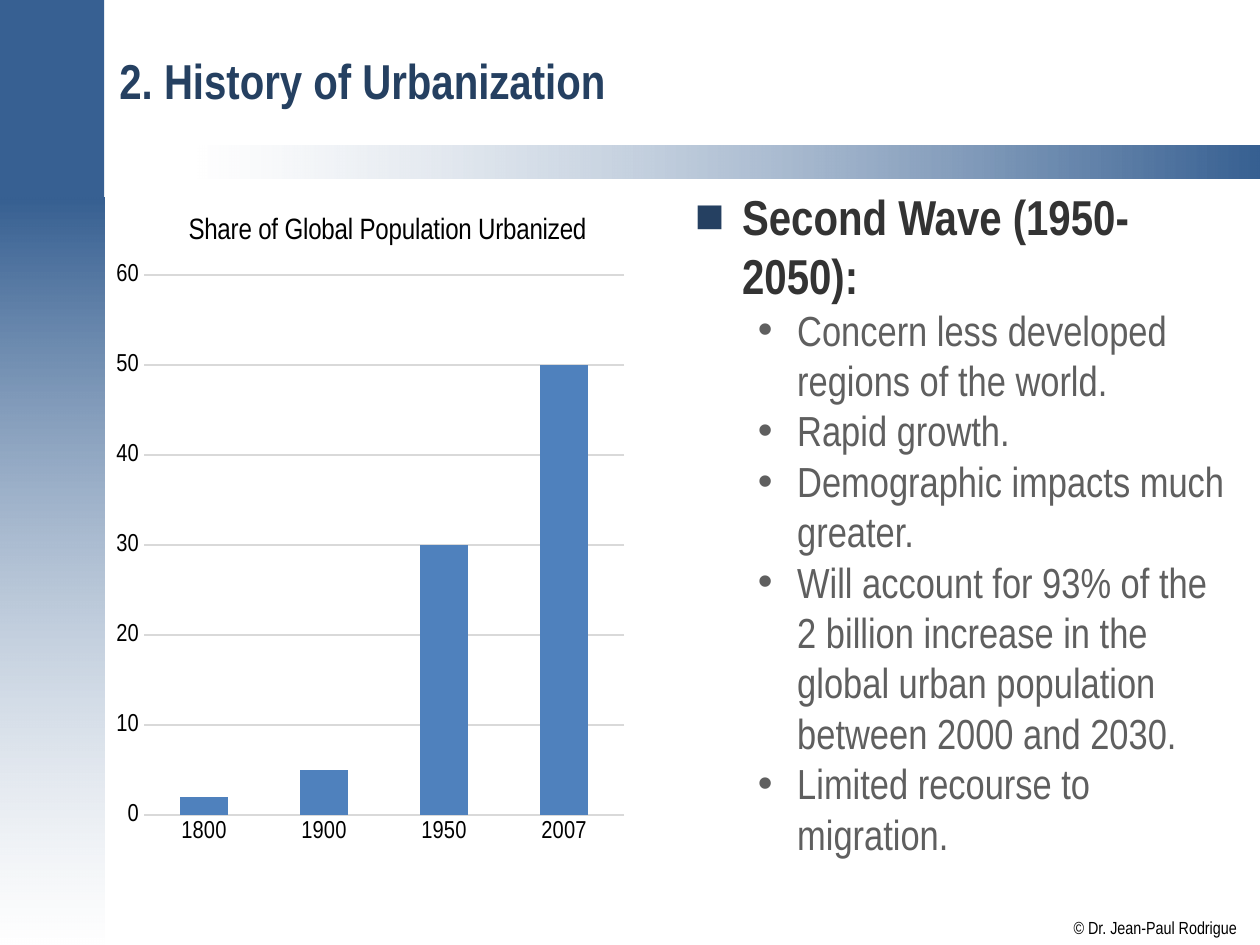
import dataclasses

import lxml.etree
import pptx
import pptx.chart.data
import pptx.dml.color
import pptx.enum.chart
import pptx.enum.shapes
import pptx.enum.text
import pptx.oxml
import pptx.oxml.ns
import pptx.util

Pt = pptx.util.Pt
qn = pptx.oxml.ns.qn


def rgb(value):
    return pptx.dml.color.RGBColor.from_string(value)


@dataclasses.dataclass(frozen=True)
class Theme:
    font: str = "Arial Narrow"
    band: str = "376092"
    heading: str = "254061"
    topic: str = "333333"
    detail: str = "5F5F5F"
    black: str = "000000"
    white: str = "FFFFFF"
    bar: str = "4F81BD"
    grid: str = "D9D9D9"
    heading_size: float = 28
    detail_size: float = 24
    chart_title_size: float = 16.8
    axis_size: float = 14
    credit_size: float = 10


def format_font(font, theme, size, color, bold=False):
    font.name = theme.font
    font.size = Pt(size)
    font.bold = bold
    font.color.rgb = rgb(color)


def write(paragraph, text, theme, size, color, bold=False):
    run = paragraph.add_run()
    run.text = text
    format_font(run.font, theme, size, color, bold)


def add_bullet(paragraph, character, indent, hanging, color):
    properties = paragraph._p.get_or_add_pPr()
    properties.set("marL", str(Pt(indent)))
    properties.set("indent", str(-Pt(hanging)))
    bullet_color = lxml.etree.SubElement(properties, qn("a:buClr"))
    lxml.etree.SubElement(bullet_color, qn("a:srgbClr"), val=color)
    lxml.etree.SubElement(properties, qn("a:buFont"), typeface="Arial")
    lxml.etree.SubElement(properties, qn("a:buChar"), char=character)


def set_layout(element, target=None, **values):
    for child in element.findall(qn("c:layout")):
        element.remove(child)
    layout = lxml.etree.Element(qn("c:layout"))
    element.insert(len(element.findall(qn("c:tx"))), layout)
    manual = lxml.etree.SubElement(layout, qn("c:manualLayout"))
    if target:
        lxml.etree.SubElement(manual, qn("c:layoutTarget"), val=target)
    for mode in ("xMode", "yMode"):
        lxml.etree.SubElement(manual, qn("c:" + mode), val="edge")
    for name, value in values.items():
        lxml.etree.SubElement(manual, qn("c:" + name), val=str(value))


class SlideBuilder:
    def __init__(self, slide, theme):
        self.slide = slide
        self.theme = theme

    def band(self, left, top, width, height, stops=None, angle=0):
        shape = self.slide.shapes.add_shape(
            pptx.enum.shapes.MSO_SHAPE.RECTANGLE, Pt(left), Pt(top), Pt(width), Pt(height))
        shape.shadow.inherit = False
        shape.line.fill.background()
        if not stops:
            shape.fill.solid()
            shape.fill.fore_color.rgb = rgb(self.theme.band)
            return
        shape.fill.gradient()
        shape.fill.gradient_angle = angle
        for stop, (color, opacity) in zip(shape.fill.gradient_stops, stops):
            stop.color.rgb = rgb(color)
            if opacity < 100:
                color_element = stop._gs.find(qn("a:srgbClr"))
                lxml.etree.SubElement(color_element, qn("a:alpha"), val=str(opacity * 1000))

    def title(self, text, left, top, width, height):
        shape = self.slide.shapes.title
        shape.left, shape.top, shape.width, shape.height = map(Pt, (left, top, width, height))
        frame = shape.text_frame
        frame.vertical_anchor = pptx.enum.text.MSO_ANCHOR.MIDDLE
        paragraph = frame.paragraphs[0]
        paragraph.alignment = pptx.enum.text.PP_ALIGN.LEFT
        write(paragraph, text, self.theme, self.theme.heading_size, self.theme.heading, True)

    def text_frame(self, left, top, width, height):
        shape = self.slide.shapes.add_textbox(Pt(left), Pt(top), Pt(width), Pt(height))
        return shape.text_frame

    def credit(self, text, *box):
        frame = self.text_frame(*box)
        frame.word_wrap = False
        frame.margin_left = frame.margin_right = frame.margin_top = frame.margin_bottom = 0
        write(frame.paragraphs[0], text, self.theme, self.theme.credit_size, self.theme.black)

    def outline(self, topic, details, *box):
        theme = self.theme
        frame = self.text_frame(*box)
        frame.word_wrap = True
        paragraph = frame.paragraphs[0]
        add_bullet(paragraph, "■", 27, 27, theme.heading)
        write(paragraph, topic, theme, theme.heading_size, theme.topic, True)
        for detail in details:
            paragraph = frame.add_paragraph()
            paragraph.level = 1
            add_bullet(paragraph, "•", 58.5, 22.5, theme.detail)
            write(paragraph, detail, theme, theme.detail_size, theme.detail)

    def column_chart(self, title, values, *box):
        theme = self.theme
        data = pptx.chart.data.CategoryChartData(number_format="0")
        data.categories = list(values)
        data.add_series("Series 1", list(values.values()))
        chart = self.slide.shapes.add_chart(
            pptx.enum.chart.XL_CHART_TYPE.COLUMN_STACKED, *map(Pt, box), data).chart
        format_font(chart.font, theme, theme.axis_size, theme.black)
        chart.has_legend = False
        chart.has_title = True
        write(chart.chart_title.text_frame.paragraphs[0], title, theme,
              theme.chart_title_size, theme.black)
        set_layout(chart.chart_title._element, x=0.14, y=0.04)
        set_layout(chart._chartSpace.chart.plotArea, "inner", x=0.07, y=0.13, w=0.86, h=0.74)

        plot = chart.plots[0]
        plot.gap_width = 150
        plot.overlap = 100
        plot.vary_by_categories = False
        fill = plot.series[0].format.fill
        fill.solid()
        fill.fore_color.rgb = rgb(theme.bar)

        value_axis = chart.value_axis
        value_axis.minimum_scale = 0
        value_axis.maximum_scale = 60
        value_axis.major_unit = 10
        for axis in (chart.category_axis, value_axis):
            axis.major_tick_mark = pptx.enum.chart.XL_TICK_MARK.NONE
            format_font(axis.tick_labels.font, theme, theme.axis_size, theme.black)
        for line in (chart.category_axis.format.line, value_axis.major_gridlines.format.line):
            line.color.rgb = rgb(theme.grid)
            line.width = Pt(0.75)
        value_axis.format.line.fill.background()


def main():
    presentation = pptx.Presentation()
    presentation.slide_width = Pt(720)
    presentation.slide_height = Pt(540)
    theme = Theme()
    builder = SlideBuilder(presentation.slides.add_slide(presentation.slide_layouts[5]), theme)

    builder.band(-0.5, 113, 60, 427, [(theme.band, 100), (theme.white, 51)], 270)
    builder.band(113, 83, 607, 19, [(theme.white, 50), (theme.band, 100)])
    builder.band(-0.5, -0.5, 60, 113.5)
    builder.credit("© Dr. Jean-Paul Rodrigue", 613.5, 524, 93.5, 12)
    builder.title("2. History of Urbanization", 61, 8, 647, 75)
    builder.column_chart("Share of Global Population Urbanized",
                         {"1800": 2, "1900": 5, "1950": 30, "2007": 50},
                         60, 103, 319, 417)
    builder.outline("Second Wave (1950-2050):", [
        "Concern less developed regions of the world.",
        "Rapid growth.",
        "Demographic impacts much greater.",
        "Will account for 93% of the 2 billion increase in the global urban population "
        "between 2000 and 2030.",
        "Limited recourse to migration.",
    ], 390, 103, 319, 417)
    presentation.save("out.pptx")


if __name__ == "__main__":
    main()
